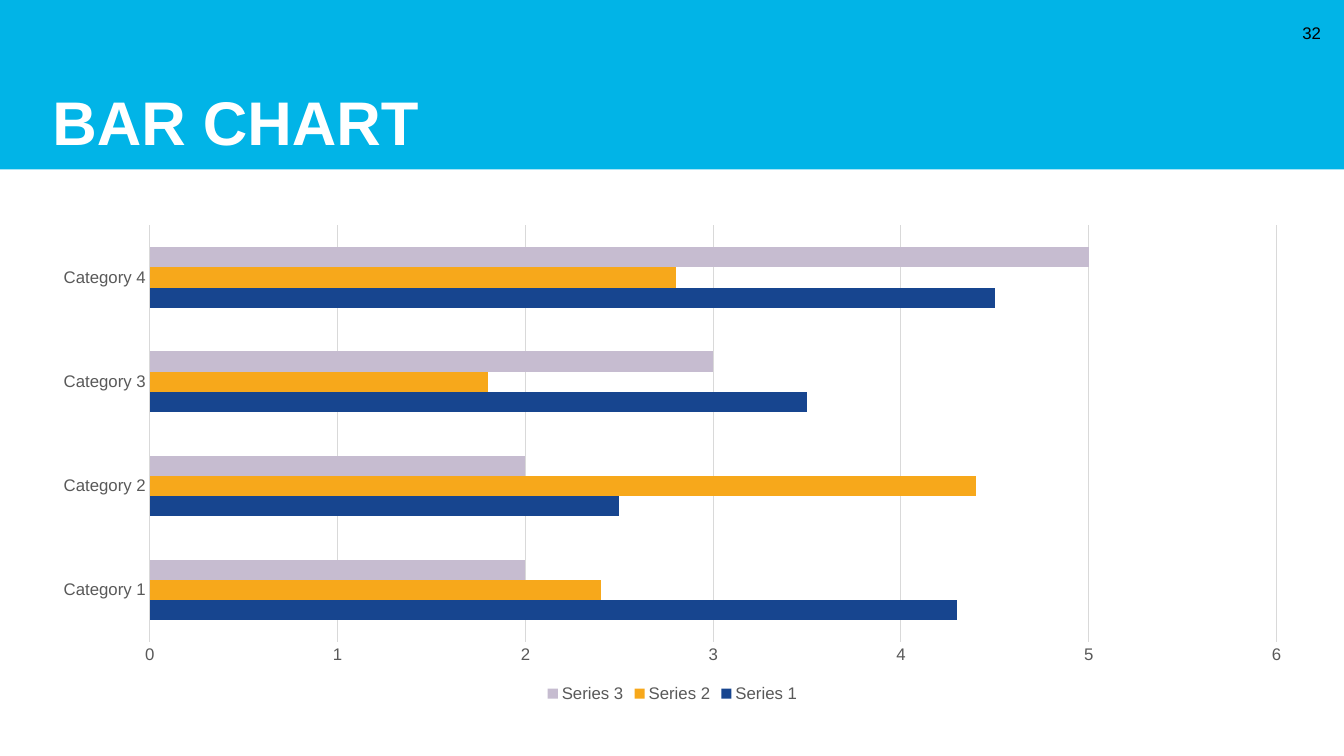
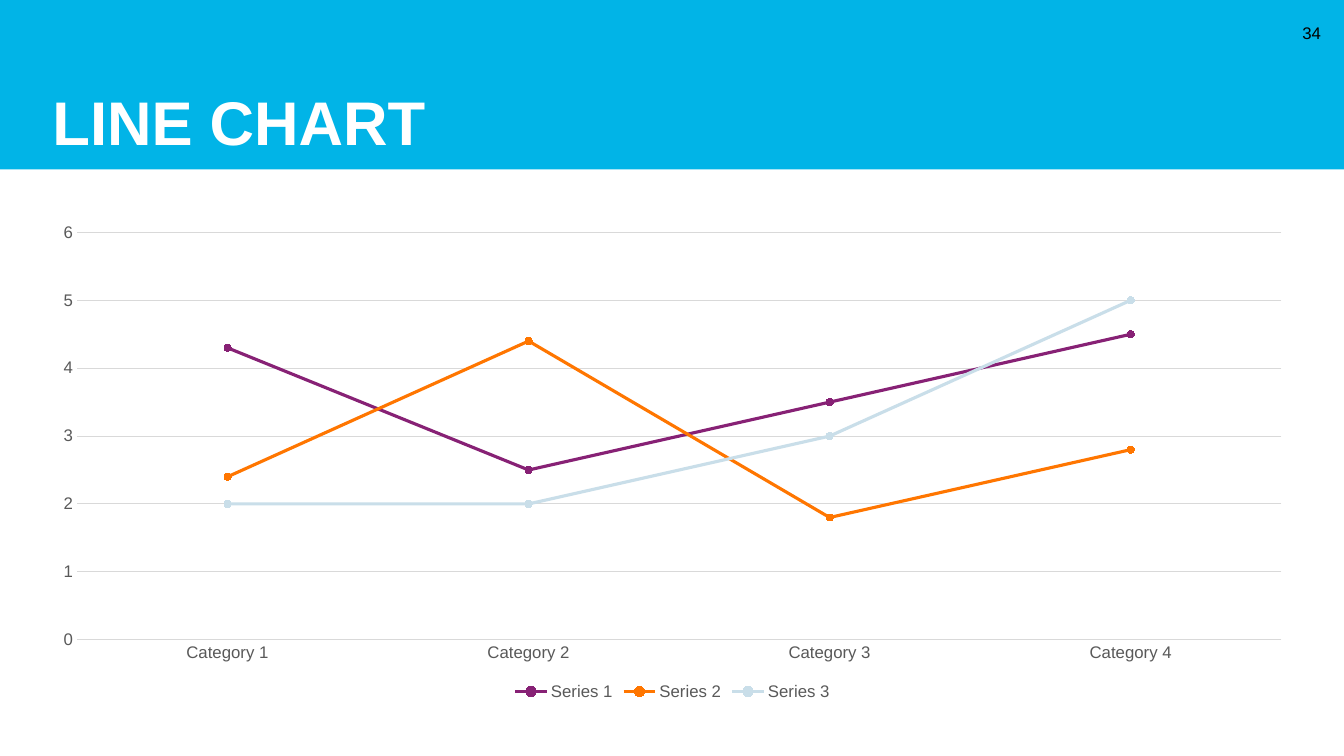
import pptx
import pptx.util
import pptx.chart.data
import pptx.dml.color
import pptx.enum.chart
import pptx.enum.shapes
import pptx.enum.text

Inches = pptx.util.Inches
Pt = pptx.util.Pt
ChartType = pptx.enum.chart.XL_CHART_TYPE
Anchor = pptx.enum.text.MSO_ANCHOR
Align = pptx.enum.text.PP_ALIGN

CATEGORIES = ["Category 1", "Category 2", "Category 3", "Category 4"]
SERIES = {
    "Series 1": (4.3, 2.5, 3.5, 4.5),
    "Series 2": (2.4, 4.4, 1.8, 2.8),
    "Series 3": (2, 2, 3, 5),
}


def color(value):
    return pptx.dml.color.RGBColor.from_string(value)


class ChartDeck:
    FONT = "Arial"
    BAND = "01B4E7"
    WHITE = "FFFFFF"
    BLACK = "000000"
    LABEL = "595959"
    GRID = "D9D9D9"
    WIDTH = Inches(13.33)
    BAND_HEIGHT = Inches(1.68)
    CONTENT_WIDTH = Inches(12.58)

    def __init__(self):
        self.deck = pptx.Presentation()
        self.deck.slide_width = self.WIDTH
        self.deck.slide_height = Inches(7.5)
        self.page = None

    def style_font(self, font, size, font_color, bold=False):
        font.name = self.FONT
        font.size = Pt(size)
        font.bold = bold
        font.color.rgb = color(font_color)

    def style_line(self, line, line_color, width=0.75):
        line.color.rgb = color(line_color)
        line.width = Pt(width)

    def add_page(self, title, number):
        self.page = self.deck.slides.add_slide(self.deck.slide_layouts[5])
        self.add_title(title)
        self.add_band()
        self.add_number(number)

    def add_title(self, text):
        title = self.page.shapes.title
        title.left, title.top = Inches(0.42), Inches(0)
        title.width, title.height = self.CONTENT_WIDTH, self.BAND_HEIGHT
        frame = title.text_frame
        frame.auto_size = pptx.enum.text.MSO_AUTO_SIZE.NONE
        frame.word_wrap = True
        frame.vertical_anchor = Anchor.BOTTOM
        frame.margin_left = frame.margin_right = frame.margin_bottom = Inches(0.1)
        frame.margin_top = Inches(0)
        para = frame.paragraphs[0]
        para.alignment = Align.LEFT
        para.line_spacing = 0.9
        span = para.add_run()
        span.text = text
        self.style_font(span.font, 44, self.WHITE, bold=True)

    def add_band(self):
        band = self.page.shapes.add_shape(
            pptx.enum.shapes.MSO_SHAPE.RECTANGLE, 0, 0, self.WIDTH, self.BAND_HEIGHT)
        band.shadow.inherit = False
        band.fill.solid()
        band.fill.fore_color.rgb = color(self.BAND)
        band.line.fill.background()
        self.page.shapes.title.element.addprevious(band.element)

    def add_number(self, number):
        box = self.page.shapes.add_textbox(
            Inches(12.74), Inches(0.13), Inches(0.46), Inches(0.4))
        frame = box.text_frame
        frame.word_wrap = True
        frame.vertical_anchor = Anchor.MIDDLE
        para = frame.paragraphs[0]
        para.alignment = Align.RIGHT
        span = para.add_run()
        span.text = str(number)
        self.style_font(span.font, 12, self.BLACK)

    def add_chart(self, kind, top):
        data = pptx.chart.data.CategoryChartData()
        data.categories = CATEGORIES
        for name, values in SERIES.items():
            data.add_series(name, values)
        chart = self.page.shapes.add_chart(
            kind, Inches(0.38), top, self.CONTENT_WIDTH, Inches(4.87), data).chart
        chart.has_title = False
        self.style_font(chart.font, 10, self.BLACK)
        chart.has_legend = True
        chart.legend.position = pptx.enum.chart.XL_LEGEND_POSITION.BOTTOM
        chart.legend.include_in_layout = False
        self.style_font(chart.legend.font, 12, self.LABEL)
        self.style_axes(chart)
        chart.plots[0].vary_by_categories = False
        return chart.plots[0]

    def style_axes(self, chart):
        no_tick = pptx.enum.chart.XL_TICK_MARK.NONE
        for axis in (chart.category_axis, chart.value_axis):
            axis.major_tick_mark = axis.minor_tick_mark = no_tick
            self.style_font(axis.tick_labels.font, 12, self.LABEL)
        chart.category_axis.has_major_gridlines = False
        self.style_line(chart.category_axis.format.line, self.GRID)
        values = chart.value_axis
        values.minimum_scale, values.maximum_scale, values.major_unit = 0, 6, 1
        values.has_major_gridlines = True
        self.style_line(values.major_gridlines.format.line, self.GRID)
        values.format.line.fill.background()

    def add_bar_chart(self, top, colors):
        plot = self.add_chart(ChartType.BAR_CLUSTERED, top)
        plot.gap_width = 219
        plot.overlap = 0
        for series, fill_color in zip(plot.series, colors):
            series.format.fill.solid()
            series.format.fill.fore_color.rgb = color(fill_color)

    def add_line_chart(self, top, colors):
        plot = self.add_chart(ChartType.LINE_MARKERS, top)
        for series, line_color in zip(plot.series, colors):
            series.smooth = False
            self.style_line(series.format.line, line_color, 2.25)
            marker = series.marker
            marker.style = pptx.enum.chart.XL_MARKER_STYLE.CIRCLE
            marker.size = 5
            marker.format.fill.solid()
            marker.format.fill.fore_color.rgb = color(line_color)
            self.style_line(marker.format.line, line_color)


def main():
    charts = ChartDeck()
    charts.add_page("BAR CHART", 32)
    charts.add_bar_chart(Inches(2.14), ["17458F", "F7A81B", "C6BCD0"])
    charts.add_page("LINE CHART", 34)
    charts.add_line_chart(Inches(2.12), ["872175", "FF7600", "C9DEE9"])
    charts.deck.save("out.pptx")


if __name__ == "__main__":
    main()
